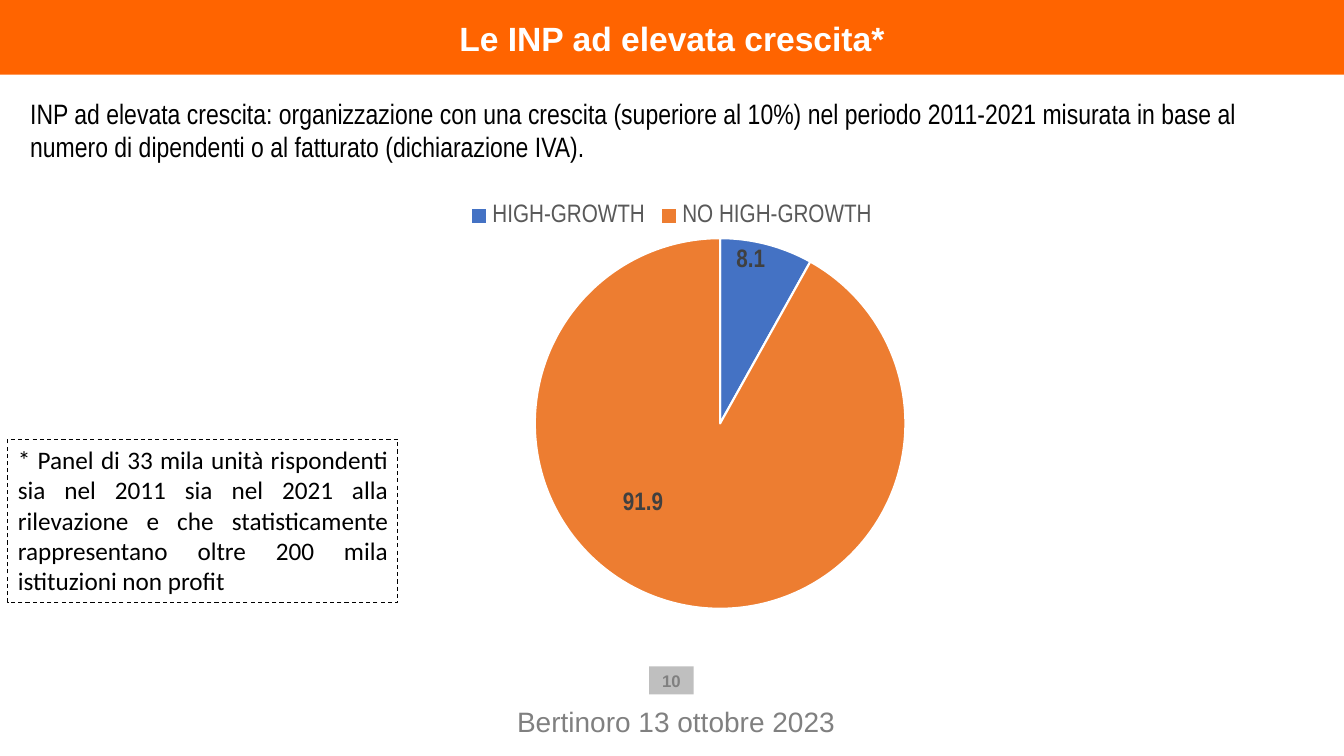
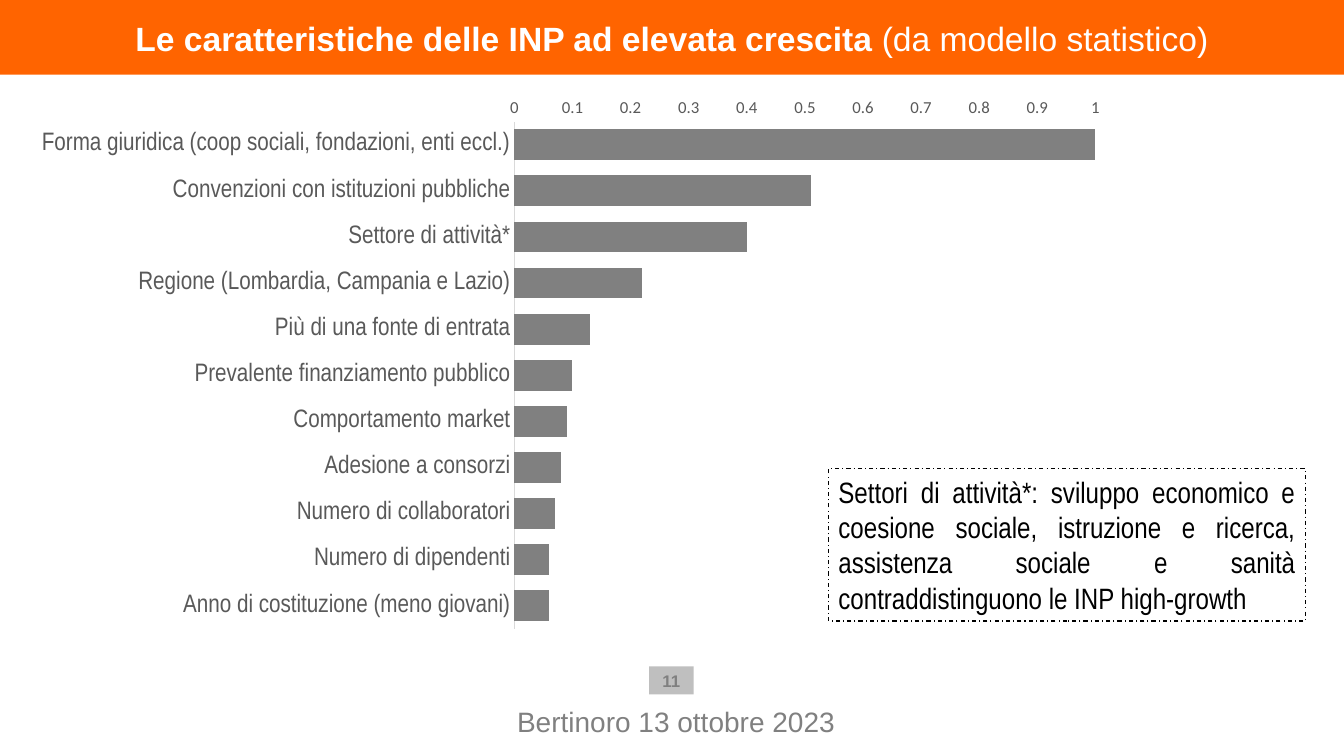
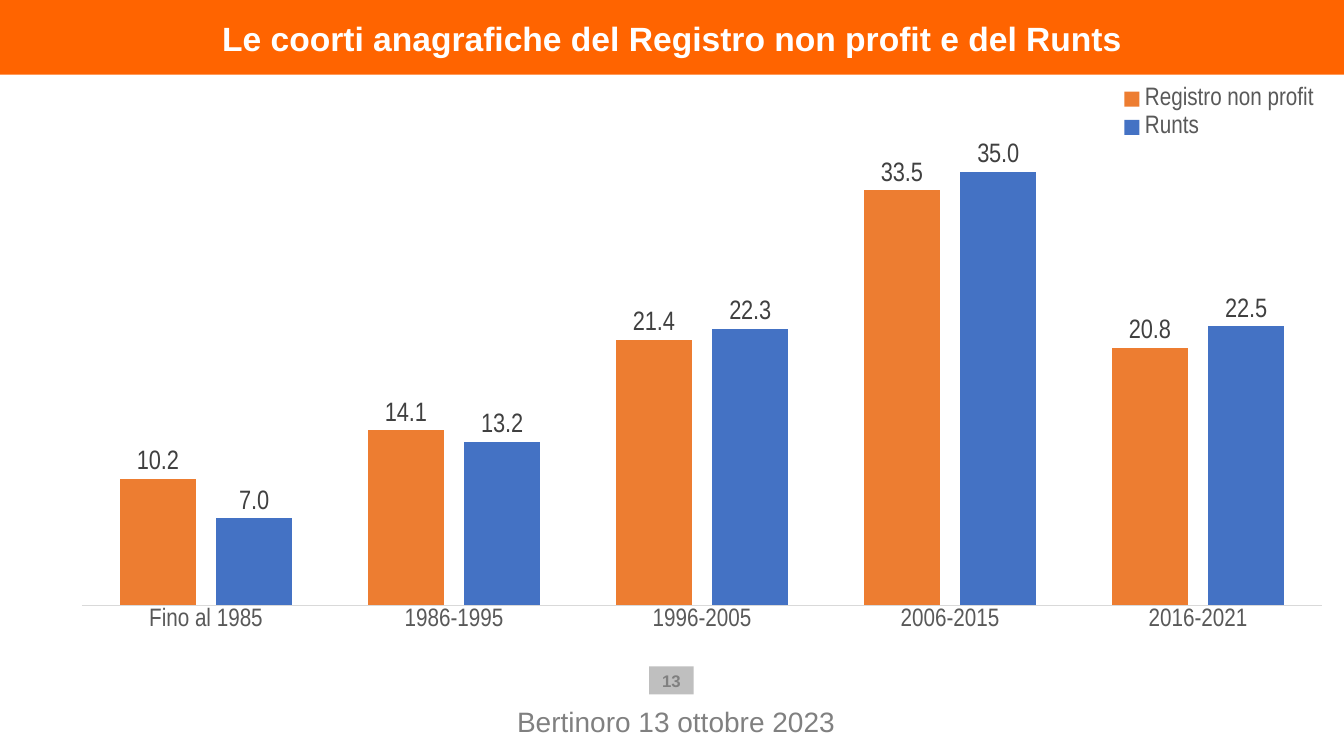
import pptx
import pptx.chart.data
import pptx.dml.color
import pptx.enum.chart
import pptx.enum.dml
import pptx.enum.shapes
import pptx.enum.text
import pptx.oxml
import pptx.util
from pptx.util import Cm, Pt

ChartType = pptx.enum.chart.XL_CHART_TYPE
LabelPosition = pptx.enum.chart.XL_LABEL_POSITION
LegendPosition = pptx.enum.chart.XL_LEGEND_POSITION
Dash = pptx.enum.dml.MSO_LINE
Align = pptx.enum.text.PP_ALIGN
Anchor = pptx.enum.text.MSO_ANCHOR
AutoSize = pptx.enum.text.MSO_AUTO_SIZE

BAND, WHITE, BLACK = "FF6400", "FFFFFF", "000000"
GREY, PALE, AXIS = "808080", "BFBFBF", "D9D9D9"
CHART_TEXT, LABEL_TEXT = "595959", "404040"
BLUE, ORANGE = "4472C4", "ED7D31"
SANS, NARROW, BODY = "Arial", "Arial Narrow", "Calibri"
WIDTH, HEIGHT = 33.87, 19.05
CHART_NS = "http://schemas.openxmlformats.org/drawingml/2006/chart"


def paint(fill, colour):
    """Give a shape, line or font fill a hex colour, or clear it with None."""
    if colour is None:
        fill.background()
    else:
        fill.solid()
        fill.fore_color.rgb = pptx.dml.color.RGBColor.from_string(colour)


def set_font(font, colour, size, **values):
    paint(font.fill, colour)
    for name, value in dict(size=Pt(size), **values).items():
        setattr(font, name, value)


# Boxes: at, runs as (text, bold), and the format values that differ per box
band = dict(at=(0, 0, WIDTH, 1.88), fill=BAND, font=(WHITE, 24, SANS),
            anchor=Anchor.BOTTOM, margins=(0.79, 0.2, 0.79, 0.41))
number = dict(at=(16.36, 16.79, 1.12, 0.71), fill=PALE, font=(GREY, 12, SANS),
              anchor=Anchor.MIDDLE)
footer = dict(at=(10.03, 17.7, 14.02, 0.91), font=(GREY, 20, SANS),
              anchor=Anchor.BOTTOM, margins=(0.25, 0.13, 0.25, 0),
              runs=[("Bertinoro 13 ottobre 2023", False)])
intro = dict(at=(0.51, 2.29, 32.84, 1.96), font=(BLACK, 20, NARROW),
             align=Align.LEFT, grow=True,
             runs=[("INP ad elevata crescita: organizzazione con una crescita "
                    "(superiore al 10%) nel periodo 2011-2021 misurata in base al "
                    "numero di dipendenti o al fatturato (dichiarazione IVA).", False)])
panel_note = dict(at=(0.2, 11.07, 9.83, 4.11), font=(BLACK, 18, BODY),
                  align=Align.JUSTIFY, grow=True, dash=Dash.DASH,
                  runs=[("* Panel di 33 mila unità rispondenti sia nel 2011 sia nel 2021 "
                         "alla rilevazione e che statisticamente rappresentano oltre "
                         "200 mila istituzioni non profit", False)])
sector_note = dict(at=(20.88, 11.81, 12.01, 3.84), font=(BLACK, 21, NARROW),
                   align=Align.JUSTIFY, grow=True, dash=Dash.DASH_DOT,
                   runs=[("Settori di attività*: sviluppo economico e coesione sociale, "
                          "istruzione e ricerca, assistenza sociale e sanità "
                          "contraddistinguono le INP high-growth", False)])

pages = [
    dict(number="10", title=[("Le INP ad elevata crescita*", True)],
         boxes=[intro, panel_note],
         kind=ChartType.PIE, at=(5.64, 4.85, 22.58, 11.53),
         plot=(0.347, 0.1, 0.414, 0.81), legend=LegendPosition.TOP,
         categories=["HIGH-GROWTH", "NO HIGH-GROWTH"],
         series=[("Series 1", [8.1, 91.9], None)]),
    dict(number="11",
         title=[("Le caratteristiche delle INP ad elevata crescita ", True),
                ("(da modello statistico)", False)],
         boxes=[sector_note],
         kind=ChartType.BAR_CLUSTERED, at=(0.33, 2.08, 27.89, 14.71),
         plot=(0.453, 0.067, 0.525, 0.869), legend=None, gap=50, overlap=0,
         categories=["Forma giuridica (coop sociali, fondazioni, enti eccl.)",
                     "Convenzioni con istituzioni pubbliche", "Settore di attività*",
                     "Regione (Lombardia, Campania e Lazio)",
                     "Più di una fonte di entrata", "Prevalente finanziamento pubblico",
                     "Comportamento market", "Adesione a consorzi",
                     "Numero di collaboratori", "Numero di dipendenti",
                     "Anno di costituzione (meno giovani)"],
         series=[("Series 1", [1, 0.51, 0.4, 0.22, 0.13, 0.1, 0.09, 0.08, 0.07,
                               0.06, 0.06], GREY)]),
    dict(number="13",
         title=[("Le coorti anagrafiche del Registro non profit e del Runts", True)],
         boxes=[],
         kind=ChartType.COLUMN_CLUSTERED, at=(0.56, 2.08, 32.77, 14.33),
         plot=(0.046, 0.048, 0.954, 0.871), legend=LegendPosition.CORNER,
         gap=100, overlap=-27,
         categories=["Fino al 1985", "1986-1995", "1996-2005", "2006-2015", "2016-2021"],
         series=[("Registro non profit", [10.2, 14.1, 21.4, 33.5, 20.8], ORANGE),
                 ("Runts", [7, 13.2, 22.3, 35, 22.5], BLUE)]),
]

deck = pptx.Presentation()
deck.slide_width, deck.slide_height = Cm(WIDTH), Cm(HEIGHT)
charts = []

for content in pages:
    page = deck.slides.add_slide(deck.slide_layouts[6])

    data = pptx.chart.data.CategoryChartData()
    data.categories = content["categories"]
    for name, values, _ in content["series"]:
        data.add_series(name, values)
    chart = page.shapes.add_chart(content["kind"], *map(Cm, content["at"]), data).chart
    charts.append(chart)
    chart.has_title = False
    set_font(chart.font, BLACK, 10, name=BODY)
    chart.has_legend = content["legend"] is not None
    if chart.has_legend:
        chart.legend.position = content["legend"]
        chart.legend.include_in_layout = False
        set_font(chart.legend.font, CHART_TEXT, 18, name=NARROW)

    # Fixed inner plot area, as fractions of the chart
    x, y, w, h = content["plot"]
    area = chart.plots[0]._element.getparent()
    for layout in area.findall(f"{{{CHART_NS}}}layout"):
        area.remove(layout)
    area.insert(0, pptx.oxml.parse_xml(
        f'<c:layout xmlns:c="{CHART_NS}"><c:manualLayout><c:layoutTarget val="inner"/>'
        f'<c:xMode val="edge"/><c:yMode val="edge"/><c:x val="{x}"/><c:y val="{y}"/>'
        f'<c:w val="{w}"/><c:h val="{h}"/></c:manualLayout></c:layout>'))

    if content["kind"] != ChartType.PIE:
        plot = chart.plots[0]
        plot.vary_by_categories = False
        plot.gap_width, plot.overlap = content["gap"], content["overlap"]
        for series, (_, _, colour) in zip(plot.series, content["series"]):
            paint(series.format.fill, colour)
            series.invert_if_negative = False
        for axis in (chart.category_axis, chart.value_axis):
            axis.has_major_gridlines = False
            axis.major_tick_mark = pptx.enum.chart.XL_TICK_MARK.NONE
        set_font(chart.category_axis.tick_labels.font, CHART_TEXT, 18, name=NARROW)
        paint(chart.category_axis.format.line.fill, AXIS)
        chart.category_axis.format.line.width = Pt(0.75)

    boxes = [dict(number, runs=[(content["number"], True)]),
             dict(band, runs=content["title"]), footer, *content["boxes"]]
    for item in boxes:
        place = map(Cm, item["at"])
        if "fill" in item or "dash" in item:
            box = page.shapes.add_shape(pptx.enum.shapes.MSO_SHAPE.RECTANGLE, *place)
            box.shadow.inherit = False
            paint(box.fill, item.get("fill"))
            paint(box.line.fill, BLACK if "dash" in item else None)
            if "dash" in item:
                box.line.width, box.line.dash_style = Pt(0.75), item["dash"]
        else:
            box = page.shapes.add_textbox(*place)
        frame = box.text_frame
        frame.word_wrap = True
        frame.auto_size = AutoSize.SHAPE_TO_FIT_TEXT if item.get("grow") else AutoSize.NONE
        frame.vertical_anchor = item.get("anchor", Anchor.TOP)
        margins = item.get("margins", (0.25, 0.13, 0.25, 0.13))
        for side, margin in zip(("left", "top", "right", "bottom"), margins):
            setattr(frame, f"margin_{side}", Cm(margin))
        para = frame.paragraphs[0]
        para.alignment = item.get("align", Align.CENTER)
        colour, size, font_name = item["font"]
        for text, bold in item["runs"]:
            span = para.add_run()
            span.text = text
            set_font(span.font, colour, size, name=font_name, bold=bold)

growth_pie, feature_bars, cohort_columns = charts

slices = [(BLUE, LabelPosition.INSIDE_END), (ORANGE, LabelPosition.CENTER)]
for index, (colour, position) in enumerate(slices):
    point = growth_pie.plots[0].series[0].points[index]
    paint(point.format.fill, colour)
    paint(point.format.line.fill, WHITE)
    point.format.line.width = Pt(1.5)
    set_font(point.data_label.font, LABEL_TEXT, 18, name=NARROW, bold=True)
    point.data_label.position = position

# Move the label of the large slice a little up and to the left
large_label = growth_pie._chartSpace.findall(f".//{{{CHART_NS}}}dLbl")[-1]
large_label.insert(1, pptx.oxml.parse_xml(
    f'<c:layout xmlns:c="{CHART_NS}"><c:manualLayout>'
    '<c:x val="-0.06"/><c:y val="-0.02"/></c:manualLayout></c:layout>'))

feature_bars.category_axis.reverse_order = True
scale = feature_bars.value_axis
scale.minimum_scale, scale.maximum_scale, scale.major_unit = 0, 1, 0.1
set_font(scale.tick_labels.font, CHART_TEXT, 12, name=BODY)
paint(scale.format.line.fill, None)

cohort_columns.value_axis.visible = False
cohort_columns.value_axis.minimum_scale = 0
cohort_columns.value_axis.maximum_scale = 40
for series in cohort_columns.plots[0].series:
    labels = series.data_labels
    label_format = dict(show_value=True, position=LabelPosition.OUTSIDE_END,
                        number_format="0.0", number_format_is_linked=False)
    for name, value in label_format.items():
        setattr(labels, name, value)
    set_font(labels.font, LABEL_TEXT, 19, name=NARROW)

deck.save("out.pptx")
